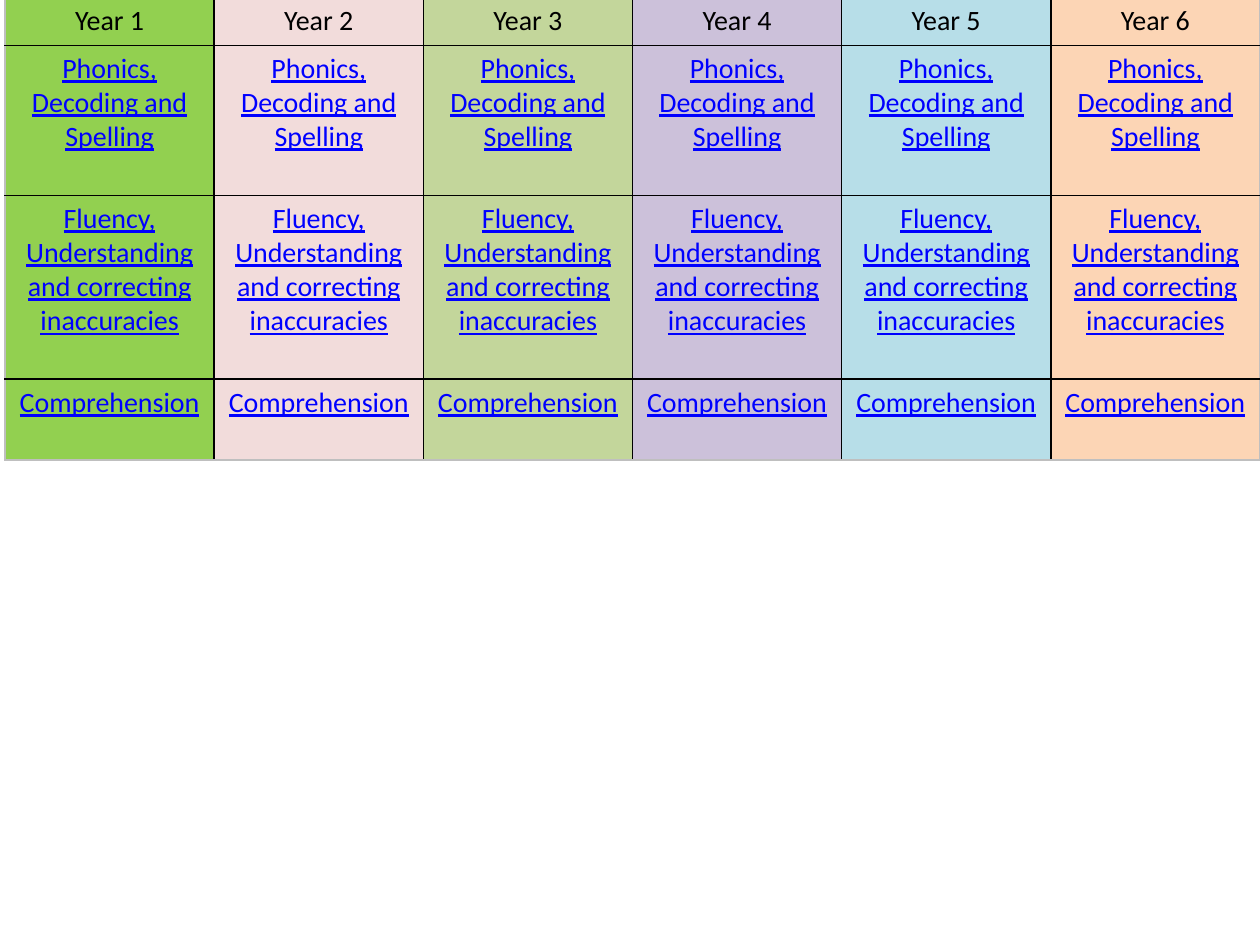
from lxml import etree
from pptx import Presentation
from pptx.dml.color import RGBColor
from pptx.enum.text import PP_ALIGN
from pptx.oxml.ns import qn
from pptx.util import Inches, Pt

CENTER = PP_ALIGN.CENTER

# Content: one column per year, the same topics under each
YEARS = [f"Year {number}" for number in range(1, 7)]
TOPICS = [
    "Phonics, Decoding and Spelling",
    "Fluency, Understanding and correcting inaccuracies",
    "Comprehension",
]
COLORS = {
    "text": "000000",
    "topic": "0000FF",
    "inner line": "000000",
    "outer line": "BFBFBF",
    "Year 1": "92D050",
    "Year 2": "F2DCDB",
    "Year 3": "C3D69B",
    "Year 4": "CCC1DA",
    "Year 5": "B7DEE8",
    "Year 6": "FCD5B5",
}
LEFT, TOP, WIDTH = 0.04, -0.02, 9.96
ROW_HEIGHTS = [0.38, 1.19, 1.46, 0.64]
HEADER_FORMAT = {"color": "text", "underline": False}
TOPIC_FORMAT = {"color": "topic", "underline": True}


def add_borders(cell, sides):
    """Draw a one-point line on each side, placed ahead of the cell fill."""
    properties = cell._tc.get_or_add_tcPr()
    for position, (side, color) in enumerate(sides.items()):
        line = etree.Element(qn(f"a:ln{side}"), w=str(Pt(1)))
        fill = etree.SubElement(line, qn("a:solidFill"))
        etree.SubElement(fill, qn("a:srgbClr"), val=COLORS[color])
        properties.insert(position, line)


def write_cell(cell, text, style):
    para = cell.text_frame.paragraphs[0]
    para.alignment = CENTER
    span = para.add_run()
    span.text = text
    values = {"name": "Calibri", "size": Pt(16), "bold": False,
              "underline": style["underline"]}
    for name, value in values.items():
        setattr(span.font, name, value)
    span.font.color.rgb = RGBColor.from_string(COLORS[style["color"]])


def main():
    deck = Presentation()
    deck.slide_width, deck.slide_height = Inches(10), Inches(7.5)
    page = deck.slides.add_slide(deck.slide_layouts[6])

    # Table grid
    row_count, column_count = len(ROW_HEIGHTS), len(YEARS)
    table = page.shapes.add_table(
        row_count, column_count, Inches(LEFT), Inches(TOP),
        Inches(WIDTH), Inches(sum(ROW_HEIGHTS))).table
    table.first_row = table.horz_banding = False
    for row, height in zip(table.rows, ROW_HEIGHTS):
        row.height = Inches(height)

    # Cells, coloured by year
    for column, year in enumerate(YEARS):
        for row, text in enumerate([year] + TOPICS):
            cell = table.cell(row, column)
            cell.fill.solid()
            cell.fill.fore_color.rgb = RGBColor.from_string(COLORS[year])
            write_cell(cell, text, TOPIC_FORMAT if row else HEADER_FORMAT)
            on_edge = {
                "L": column == 0,
                "R": column == column_count - 1,
                "T": row == 0,
                "B": row == row_count - 1,
            }
            add_borders(cell, {side: "outer line" if edge else "inner line"
                               for side, edge in on_edge.items()})

    deck.save("out.pptx")


if __name__ == "__main__":
    main()
